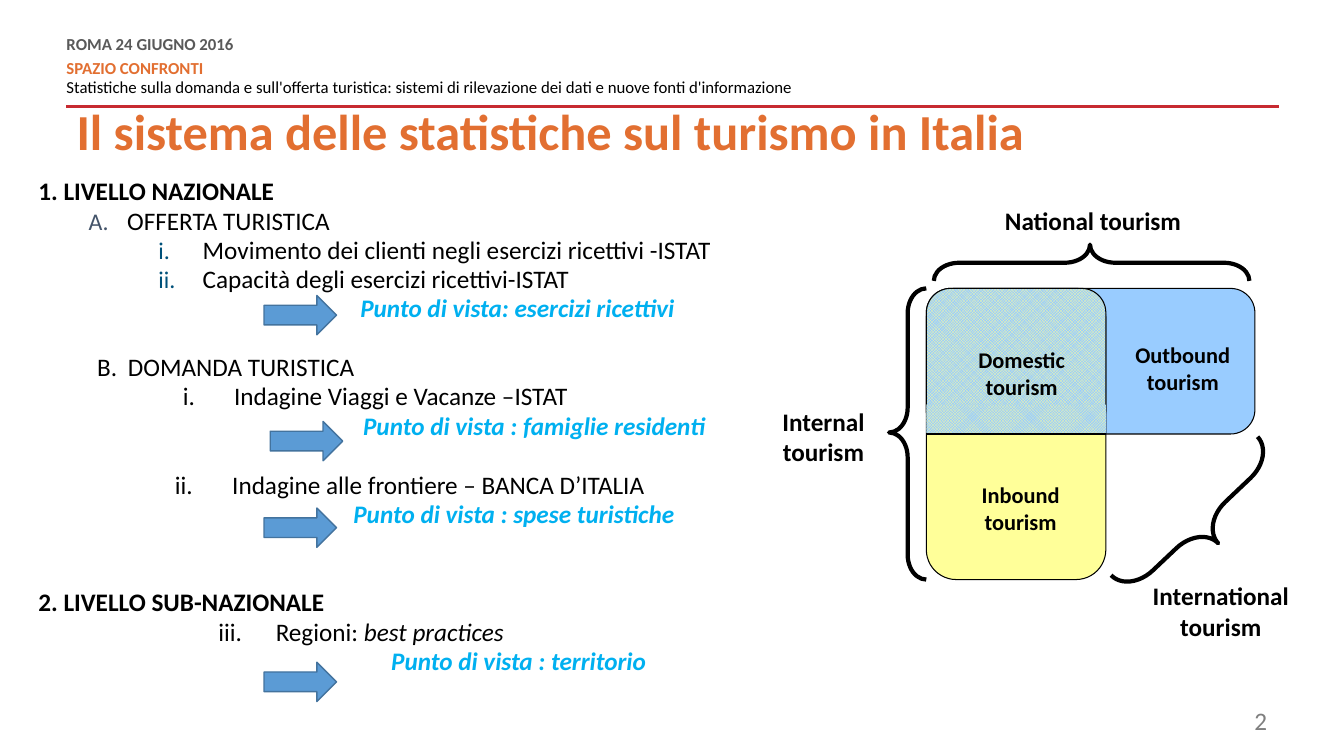
import pptx
import pptx.util
import pptx.dml.color
import pptx.enum.dml
import pptx.enum.shapes
import pptx.enum.text
import pptx.oxml.ns
from lxml import etree

Pt = pptx.util.Pt
SHAPE = pptx.enum.shapes.MSO_SHAPE
ALIGN = pptx.enum.text.PP_ALIGN
ORANGE, BLACK, CYAN = "E26F31", "000000", "00B0F0"
BLUE, YELLOW = "99CCFF", "FFFF99"


def colour(value):
    return pptx.dml.color.RGBColor.from_string(value)


def add_xml(parent, tag, **attributes):
    element = etree.SubElement(parent, pptx.oxml.ns.qn(tag))
    for key, value in attributes.items():
        element.set(key, value)
    return element


def add_run(paragraph, text, size, hue=BLACK, bold=False, italic=False):
    run = paragraph.add_run()
    run.text = text
    run.font.name = "Calibri"
    run.font.size = Pt(size)
    run.font.bold = bold
    run.font.italic = italic
    run.font.color.rgb = colour(hue)


def prepare_frame(shape, inset=True):
    frame = shape.text_frame
    frame.word_wrap = True
    frame.auto_size = pptx.enum.text.MSO_AUTO_SIZE.NONE
    frame.vertical_anchor = pptx.enum.text.MSO_ANCHOR.TOP
    if not inset:
        frame.margin_left = frame.margin_right = frame.margin_top = frame.margin_bottom = 0
    return frame


def add_frame(slide, left, top, width, height, inset=True):
    box = slide.shapes.add_textbox(Pt(left), Pt(top), Pt(width), Pt(height))
    return prepare_frame(box, inset)


def add_label(slide, text, size, left, top, width, height):
    paragraph = add_frame(slide, left, top, width, height).paragraphs[0]
    paragraph.alignment = ALIGN.CENTER
    add_run(paragraph, text, size, bold=True)


def add_outlined(slide, kind, left, top, width, height, fill=None, line=None, weight=0.75):
    shape = slide.shapes.add_shape(kind, Pt(left), Pt(top), Pt(width), Pt(height))
    shape.shadow.inherit = False
    if fill == "check":
        shape.fill.patterned()
        shape.fill.pattern = pptx.enum.dml.MSO_PATTERN.SMALL_CHECKER_BOARD
        shape.fill.fore_color.rgb = colour(YELLOW)
        shape.fill.back_color.rgb = colour(BLUE)
    elif fill:
        shape.fill.solid()
        shape.fill.fore_color.rgb = colour(fill)
    else:
        shape.fill.background()
    if line:
        shape.line.color.rgb = colour(line)
        shape.line.width = Pt(weight)
    else:
        shape.line.fill.background()
    return shape


def add_rule(slide, left, top, right, hue, weight):
    rule = slide.shapes.add_connector(
        pptx.enum.shapes.MSO_CONNECTOR.STRAIGHT, Pt(left), Pt(top), Pt(right), Pt(top))
    rule.line.color.rgb = colour(hue)
    rule.line.width = Pt(weight)
    add_xml(rule._element.spPr, "a:effectLst")
    return rule


def add_brace(slide, left, top, width, height, curl, rotation=0, flipped=False):
    brace = add_outlined(slide, SHAPE.RIGHT_BRACE, left, top, width, height, line=BLACK, weight=3)
    brace.adjustments[0] = curl
    brace.adjustments[1] = 0.495
    brace.rotation = rotation
    if flipped:
        brace._element.spPr.xfrm.set("flipH", "1")


def event_header(slide, left, top, width, height):
    lines = [
        ("ROMA 24 GIUGNO 2016", "595959", True, 0, 6),
        ("SPAZIO CONFRONTI", ORANGE, True, 0, 0),
        ("Statistiche sulla domanda e sull'offerta turistica: sistemi di rilevazione "
         "dei dati e nuove fonti d'informazione", BLACK, False, 3, 6),
    ]
    frame = add_frame(slide, left, top, width, height, inset=False)
    for index, (text, hue, bold, before, after) in enumerate(lines):
        paragraph = frame.add_paragraph() if index else frame.paragraphs[0]
        paragraph.line_spacing = Pt(10.8)
        paragraph.space_before = Pt(before)
        paragraph.space_after = Pt(after)
        add_run(paragraph, text, 12, hue, bold)
    add_rule(slide, left, top + 48.3, left + 866.2, "C72A31", 2)


def slide_title(slide, left, top, width, height):
    title = slide.shapes.title
    title.left, title.top, title.width, title.height = Pt(left), Pt(top), Pt(width), Pt(height)
    paragraph = prepare_frame(title).paragraphs[0]
    paragraph.alignment = ALIGN.LEFT
    paragraph.line_spacing = 1.0
    paragraph.space_before = Pt(0)
    add_run(paragraph, "Il sistema delle statistiche sul turismo in Italia", 36, ORANGE, True)


def survey_outline(slide, left, top, width, height):
    heading, view = dict(bold=True), dict(hue=CYAN, bold=True, italic=True)
    upper, roman = "alphaUcPeriod", "romanLcPeriod"
    line, gap = 21.2, 3.6
    entries = [
        ([("1. LIVELLO NAZIONALE", heading)], 0, 0, 0, None),
        ([("OFFERTA TURISTICA", {})], 1, 63.4, gap, (upper, 1, 27.4, "44546A", 95)),
        ([("Movimento dei clienti negli esercizi ricettivi -ISTAT", {})],
         2, 117.4, gap, (roman, 1, 31.7, "00517A", 95)),
        ([("Capacità degli esercizi ricettivi-ISTAT", {})],
         2, 117.4, gap, (roman, 1, 31.7, "00517A", 95)),
        ([("Punto di vista: esercizi ricettivi", view)], 2, 230, gap, None),
        ([("DOMANDA TURISTICA", {})], 1, 64, gap + line, (upper, 2, 22, BLACK, 100)),
        ([("Indagine Viaggi e Vacanze –ISTAT", {})],
         2, 139.8, gap, (roman, 1, 36.5, BLACK, 100)),
        ([("Punto di vista : famiglie residenti", view)], 2, 232, gap, None),
        ([("Indagine alle frontiere – BANCA D’ITALIA", {})],
         2, 138.5, gap + line, (roman, 2, 41, BLACK, 100)),
        ([("Punto di vista : spese turistiche", view)], 2, 225, gap, None),
        ([("2. LIVELLO SUB-NAZIONALE", heading)], 0, 0, gap + 2 * line, None),
        ([("Regioni: ", {}), ("best practices", dict(italic=True))],
         2, 169.6, gap, (roman, 1, 41, BLACK, 100)),
        ([("Punto di vista : territorio", view)], 2, 252, gap, None),
    ]
    frame = add_frame(slide, left, top, width, height, inset=False)
    for index, (runs, level, indent, before, number) in enumerate(entries):
        paragraph = frame.add_paragraph() if index else frame.paragraphs[0]
        paragraph.level = level
        properties = paragraph._p.get_or_add_pPr()
        properties.set("marL", str(Pt(indent)))
        properties.set("indent", "0")
        if number:
            scheme, start, hang, hue, percent = number
            properties.set("indent", str(-Pt(hang)))
            add_xml(add_xml(properties, "a:buClr"), "a:srgbClr", val=hue)
            add_xml(properties, "a:buSzPct", val=str(percent * 1000))
            add_xml(properties, "a:buFont", typeface="Calibri")
            add_xml(properties, "a:buAutoNum", type=scheme, startAt=str(start))
        paragraph.line_spacing = 0.8
        paragraph.space_before = Pt(before)
        for text, style in runs:
            add_run(paragraph, text, 18, **style)
    for across, down in [(161.2, 81.4), (165.6, 171.4), (161.2, 233.3), (161.2, 343.4)]:
        add_outlined(slide, SHAPE.RIGHT_ARROW, left + across, top + down, 51.8, 28.1,
                     "5B9BD5", "43739E", 1)


def tourism_map(slide, left, top, width, height):
    column, row = 128.2, height / 2
    add_outlined(slide, SHAPE.ROUNDED_RECTANGLE, left, top, width, row, BLUE, BLACK)
    internal = add_outlined(slide, SHAPE.ROUNDED_RECTANGLE, left, top, column, height, YELLOW, BLACK)
    add_outlined(slide, SHAPE.ROUNDED_RECTANGLE, left, top, column, row, "check", BLACK)
    add_outlined(slide, SHAPE.RECTANGLE, left, top + row - 21, column, 21, "check")
    divider = add_rule(slide, left, top + row, left + column, BLACK, 0.75)
    divider.begin_connect(internal, 1)
    divider.end_connect(internal, 3)

    add_brace(slide, left - 26.6, top, 26.6, height, 0.667, flipped=True)
    add_brace(slide, left + 105.1, top - 131, 25.9, 225.4, 0.701, rotation=270)
    add_brace(slide, left + 178.6, top + 96.5, 36, 144, 0.667, rotation=226.6, flipped=True)
    for text, size, across, down, label_width, label_height in [
        ("Inbound tourism", 16, 17.3, 134, 100, 31),
        ("Outbound tourism", 16, 136, 34.5, 94.3, 47.5),
        ("Domestic tourism", 16, 17.3, 38, 101.5, 44.6),
        ("National tourism", 18, 28, -62.6, 182.2, 31.7),
        ("Internal tourism", 18, -134, 80.6, 121, 52.6),
        ("International tourism", 18, 149.8, 205.2, 121, 52.6),
    ]:
        add_label(slide, text, size, left + across, top + down, label_width, label_height)


def page_number(slide, left, top, width, height):
    paragraph = add_frame(slide, left, top, width, height).paragraphs[0]
    paragraph.alignment = ALIGN.RIGHT
    add_run(paragraph, "2", 18, "7F7F7F")


def main():
    deck = pptx.Presentation()
    deck.slide_width, deck.slide_height = Pt(960), Pt(540)
    slide = deck.slides.add_slide(deck.slide_layouts[5])
    event_header(slide, 47.5, 28, 600.5, 42.5)
    slide_title(slide, 47.5, 67.7, 791.3, 51)
    survey_outline(slide, 27.4, 129.6, 607.7, 401)
    tourism_map(slide, 661.7, 206, 234.7, 208)
    page_number(slide, 688.3, 500.4, 224, 28.8)
    deck.save("out.pptx")


if __name__ == "__main__":
    main()
